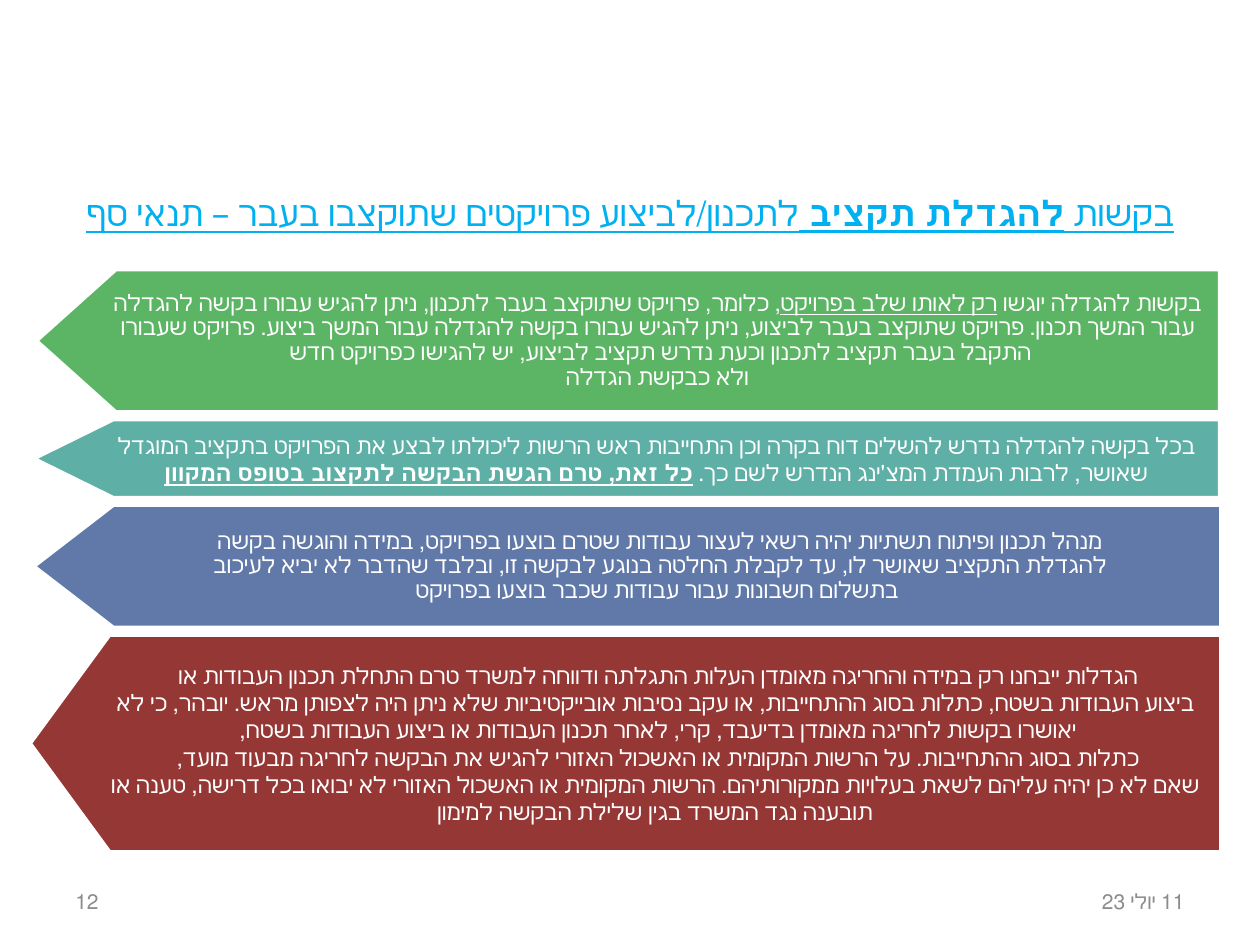
from dataclasses import dataclass

from pptx import Presentation
from pptx.dml.color import RGBColor as RGB
from pptx.enum.text import MSO_ANCHOR as Anchor, PP_ALIGN as Align
from pptx.util import Inches, Pt


@dataclass(frozen=True)
class Theme:
    title: tuple = ("Montserrat", 20, "00B0F0")
    body: tuple = ("Lato", 13, "FFFFFF")
    footer: tuple = ("Calibri", 12, "8C8C8C")
    outline: str = "FFFFFF"
    green: str = "5CB565"
    teal: str = "5EAFA6"
    blue: str = "6179A8"
    red: str = "953735"


THEME = Theme()

# Content: runs are (text, style), where style holds b for bold and u for underline
TITLE = [
    ("בקשות ", "u"),
    ("להגדלת תקציב ", "bu"),
    ("לתכנון/לביצוע פרויקטים שתוקצבו בעבר – תנאי סף", "u"),
]
SAME_STAGE = [
    ("בקשות להגדלה יוגשו ", ""),
    ("רק לאותו שלב בפרויקט", "u"),
    (", כלומר, פרויקט שתוקצב בעבר לתכנון, ניתן להגיש עבורו בקשה להגדלה עבור המשך תכנון. "
     "פרויקט שתוקצב בעבר לביצוע, ניתן להגיש עבורו בקשה להגדלה עבור המשך ביצוע. "
     "פרויקט שעבורו התקבל בעבר תקציב לתכנון וכעת נדרש תקציב לביצוע, יש להגישו כפרויקט חדש \n"
     "ולא כבקשת הגדלה", ""),
]
COMMITMENT = [
    ("בכל בקשה להגדלה נדרש להשלים דוח בקרה וכן התחייבות ראש הרשות ליכולתו לבצע את הפרויקט "
     "בתקציב המוגדל שאושר, לרבות העמדת המצ'ינג הנדרש לשם כך. ", ""),
    ("כל זאת, טרם הגשת הבקשה לתקצוב בטופס המקוון", "bu"),
]
HALTING = [
    ("מנהל תכנון ופיתוח תשתיות יהיה רשאי לעצור עבודות שטרם בוצעו בפרויקט, במידה והוגשה בקשה \n"
     "להגדלת התקציב שאושר לו, עד לקבלת החלטה בנוגע לבקשה זו, ובלבד שהדבר לא יביא לעיכוב \n"
     "בתשלום חשבונות עבור עבודות שכבר בוצעו בפרויקט", ""),
]
OVERRUN = [
    ("הגדלות ייבחנו רק במידה והחריגה מאומדן העלות התגלתה ודווחה למשרד טרם התחלת תכנון העבודות או \n"
     "ביצוע העבודות בשטח, כתלות בסוג ההתחייבות, או עקב נסיבות אובייקטיביות שלא ניתן היה לצפותן מראש. "
     "יובהר, כי לא יאושרו בקשות לחריגה מאומדן בדיעבד, קרי, לאחר תכנון העבודות או ביצוע העבודות בשטח, \n"
     "כתלות בסוג ההתחייבות. על הרשות המקומית או האשכול האזורי להגיש את הבקשה לחריגה מבעוד מועד, \n"
     "שאם לא כן יהיה עליהם לשאת בעלויות ממקורותיהם. הרשות המקומית או האשכול האזורי לא יבואו "
     "בכל דרישה, טענה או תובענה נגד המשרד בגין שלילת הבקשה למימון", ""),
]
# Conditions: runs, fill, left tip, right edge, height, line spacing
CONDITIONS = [
    (SAME_STAGE, THEME.green, 0.29, 9.68, 1.13, 0.9),
    (COMMITMENT, THEME.teal, 0.27, 9.68, 0.62, None),
    (HALTING, THEME.blue, 0.27, 9.69, 0.97, 0.9),
    (OVERRUN, THEME.red, 0.24, 9.69, 1.72, None),
]
DATE, PAGE = "11 יולי 23", "12"

# Grid, in inches
WIDTH, HEIGHT = 10, 7.5
STACK_TOP, GAP, POINT = 2.14, 0.06, 0.63
FOOTER_TOP, FOOTER_W, FOOTER_H, MARGIN = 6.95, 2.33, 0.4, 0.5


def write(shape, runs, style, align, spacing=None):
    """Fill a shape with one right-to-left paragraph."""
    face, size, color = style
    frame = shape.text_frame
    frame.word_wrap = True
    frame.vertical_anchor = Anchor.MIDDLE
    paragraph = frame.paragraphs[0]
    paragraph.alignment = align
    paragraph._p.get_or_add_pPr().set("rtl", "1")
    if spacing:
        paragraph.line_spacing = spacing
    for text, marks in runs:
        for number, line in enumerate(text.split("\n")):
            if number:
                paragraph.add_line_break()
            run = paragraph.add_run()
            run.text = line
            font = run.font
            font.name, font.size = face, Pt(size)
            font.color.rgb = RGB.from_string(color)
            font.bold, font.underline = "b" in marks, "u" in marks


def add_text(slide, box, runs, style, align):
    write(slide.shapes.add_textbox(*map(Inches, box)), runs, style, align)


def add_condition(slide, top, runs, fill, left, right, height, spacing):
    """Draw a banner pointing left, with its text."""
    shoulder, bottom = left + POINT, top + height
    outline = slide.shapes.build_freeform(Inches(right), Inches(bottom))
    corners = [(shoulder, bottom), (left, top + height / 2), (shoulder, top), (right, top)]
    outline.add_line_segments([(Inches(x), Inches(y)) for x, y in corners], close=True)
    banner = outline.convert_to_shape()
    banner.shadow.inherit = False
    banner.fill.solid()
    banner.fill.fore_color.rgb = RGB.from_string(fill)
    banner.line.color.rgb = RGB.from_string(THEME.outline)
    banner.line.width = Pt(2)
    frame = banner.text_frame
    frame.margin_left, frame.margin_right = Inches(0.56), Inches(0.1)
    frame.margin_top = frame.margin_bottom = Inches(0.05)
    write(banner, runs, THEME.body, Align.CENTER, spacing)


def main():
    deck = Presentation()
    deck.slide_width, deck.slide_height = Inches(WIDTH), Inches(HEIGHT)
    slide = deck.slides.add_slide(deck.slide_layouts[6])

    # Title
    add_text(slide, (0.04, 1.37, WIDTH - 0.08, 0.63), TITLE, THEME.title, Align.CENTER)

    # Footer
    for text, left, align in [
        (DATE, WIDTH - MARGIN - FOOTER_W, Align.RIGHT),
        (PAGE, MARGIN, Align.LEFT),
    ]:
        add_text(slide, (left, FOOTER_TOP, FOOTER_W, FOOTER_H), [(text, "")], THEME.footer, align)

    # Stack of conditions
    top = STACK_TOP
    for runs, fill, left, right, height, spacing in CONDITIONS:
        add_condition(slide, top, runs, fill, left, right, height, spacing)
        top += height + GAP

    deck.save("out.pptx")


if __name__ == "__main__":
    main()
